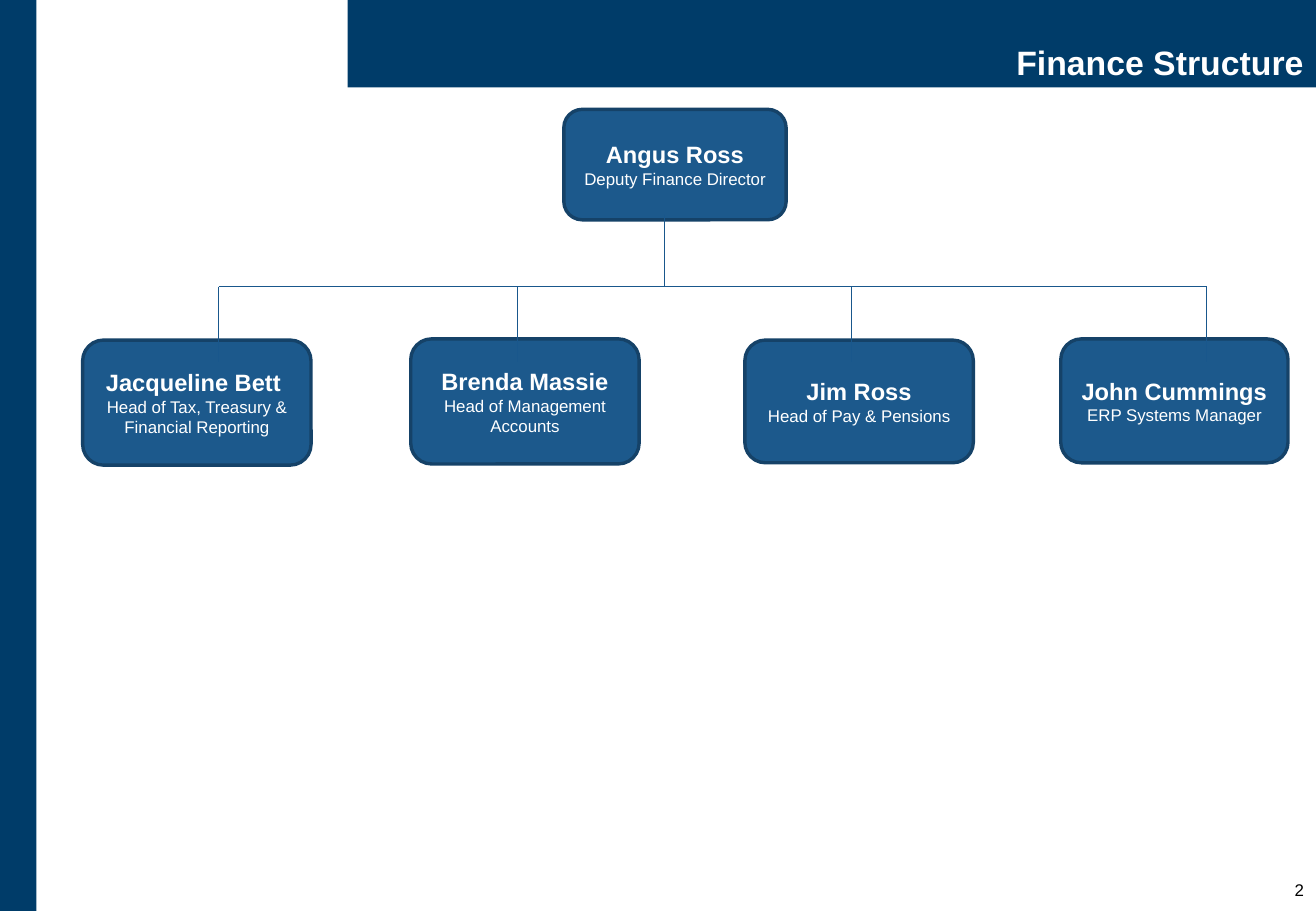
import pptx
import pptx.util
import pptx.dml.color
import pptx.enum.shapes
import pptx.enum.text
import pptx.oxml.ns
from lxml import etree

Inches, Pt = pptx.util.Inches, pptx.util.Pt
SHAPE = pptx.enum.shapes.MSO_SHAPE
ALIGN = pptx.enum.text.PP_ALIGN
ANCHOR = pptx.enum.text.MSO_ANCHOR

# Content: name, role, box (left, top, width, height)
TITLE = "Finance Structure"
PAGE = "2"
DIRECTOR = ("Angus Ross", "Deputy Finance Director", (4.64, 0.9, 1.83, 0.91))
# Each report also has the x of its drop line
REPORTS = [
    ("Jacqueline Bett ", "Head of Tax, Treasury & Financial Reporting",
     (0.68, 2.8, 1.88, 1.03), 1.8),
    ("Brenda Massie", "Head of Management Accounts",
     (3.38, 2.79, 1.88, 1.03), 4.26),
    ("Jim Ross", "Head of Pay & Pensions",
     (6.13, 2.8, 1.88, 1.01), 7.01),
    ("John Cummings", "ERP Systems Manager",
     (8.73, 2.79, 1.87, 1.02), 9.93),
]

# Layout and colours
WIDTH, HEIGHT = 10.83, 7.5
SIDE_W = 0.3
TITLE_LEFT, TITLE_H = 2.86, 0.72
BUS_Y, DROP_END = 2.36, 2.98
STEM_X, STEM_TOP = 5.47, 1.77
NAVY, BLUE, EDGE, LINK = "003C69", "1C598C", "154268", "19578C"
WHITE, BLACK = "FFFFFF", "000000"


def rgb(value):
    return pptx.dml.color.RGBColor.from_string(value)


def style(p, size, color, align, bold=False):
    p.alignment = align
    p.font.name = "Arial"
    p.font.size = Pt(size)
    p.font.bold = bold
    p.font.color.rgb = rgb(color)


def add_block(s, kind, box, fill, edge=None):
    sp = s.shapes.add_shape(kind, *map(Inches, box))
    sp.shadow.inherit = False
    sp.fill.solid()
    sp.fill.fore_color.rgb = rgb(fill)
    if edge:
        sp.line.color.rgb = rgb(edge)
        sp.line.width = Pt(2)
    else:
        sp.line.fill.background()
    return sp


def add_person(s, name, role, box):
    tf = add_block(s, SHAPE.ROUNDED_RECTANGLE, box, BLUE, EDGE).text_frame
    tf.word_wrap = True
    tf.vertical_anchor = ANCHOR.MIDDLE
    tf.text = name + "\n" + role
    style(tf.paragraphs[0], 14, WHITE, ALIGN.CENTER, True)
    style(tf.paragraphs[1], 10, WHITE, ALIGN.CENTER)


def add_line(s, x1, y1, x2, y2):
    line = s.shapes.add_connector(pptx.enum.shapes.MSO_CONNECTOR.STRAIGHT,
                                  *map(Inches, (x1, y1, x2, y2)))
    line.line.color.rgb = rgb(LINK)
    line.line.width = Pt(0.75)
    etree.SubElement(line._element.spPr, pptx.oxml.ns.qn("a:effectLst"))


def main():
    prs = pptx.Presentation()
    prs.slide_width, prs.slide_height = Inches(WIDTH), Inches(HEIGHT)
    s = prs.slides.add_slide(prs.slide_layouts[5])

    # Side band and title bar
    add_block(s, SHAPE.RECTANGLE, (0, 0, SIDE_W, HEIGHT), NAVY)
    title = s.shapes.title
    title.left, title.top = Inches(TITLE_LEFT), 0
    title.width, title.height = Inches(WIDTH - TITLE_LEFT), Inches(TITLE_H)
    title.fill.solid()
    title.fill.fore_color.rgb = rgb(NAVY)
    tf = title.text_frame
    tf.text = TITLE
    tf.vertical_anchor = ANCHOR.BOTTOM
    tf.margin_left, tf.margin_right = Inches(0.08), Inches(0.1)
    tf.margin_top = tf.margin_bottom = Inches(0.04)
    tf.paragraphs[0].line_spacing = 0.9
    style(tf.paragraphs[0], 20, WHITE, ALIGN.RIGHT, True)

    # Page number
    tf = s.shapes.add_textbox(*map(Inches, (9.96, 7.19, 0.87, 0.31))).text_frame
    tf.word_wrap = True
    tf.text = PAGE
    style(tf.paragraphs[0], 10, BLACK, ALIGN.RIGHT)

    # People
    add_person(s, *DIRECTOR)
    for name, role, box, _ in REPORTS:
        add_person(s, name, role, box)

    # Reporting lines: bus, drops, stem
    drops = [report[-1] for report in REPORTS]
    add_line(s, drops[0], BUS_Y, drops[-1], BUS_Y)
    for x in drops:
        add_line(s, x, BUS_Y, x, DROP_END)
    add_line(s, STEM_X, STEM_TOP, STEM_X, BUS_Y)

    prs.save("out.pptx")


if __name__ == "__main__":
    main()
